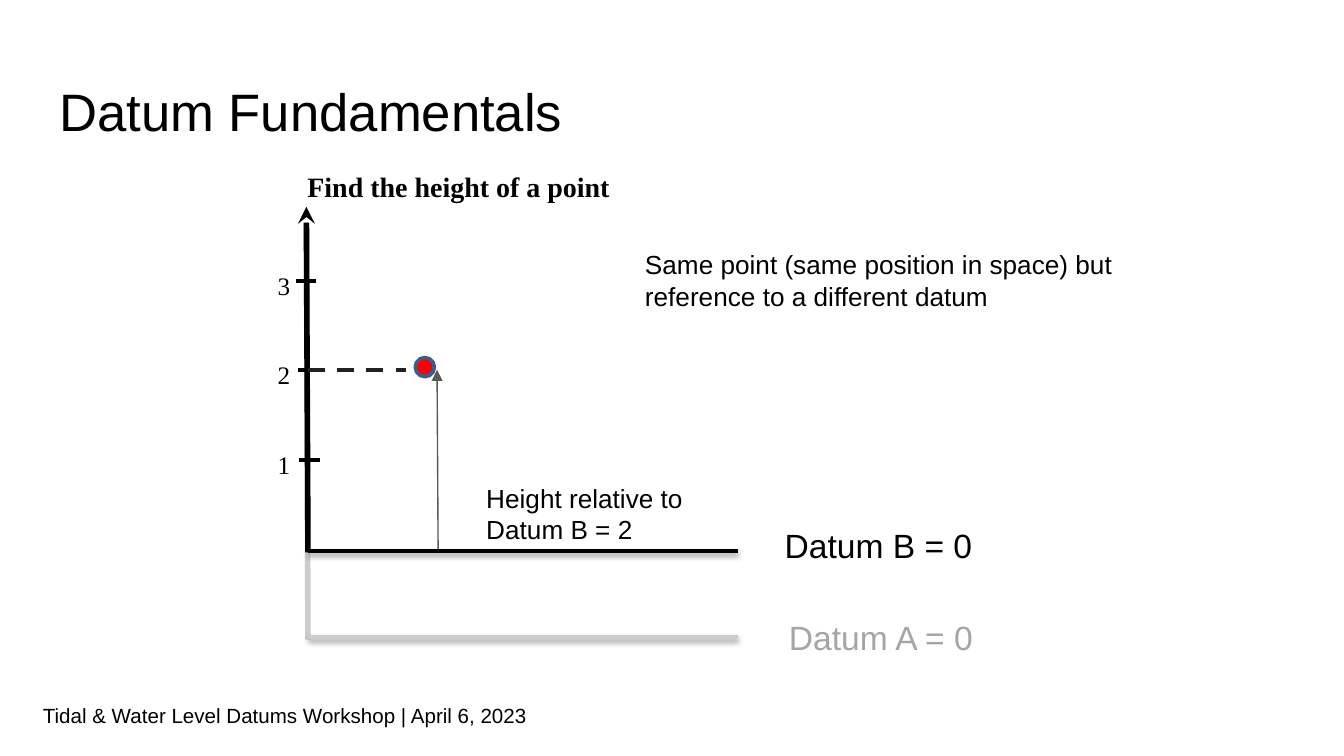
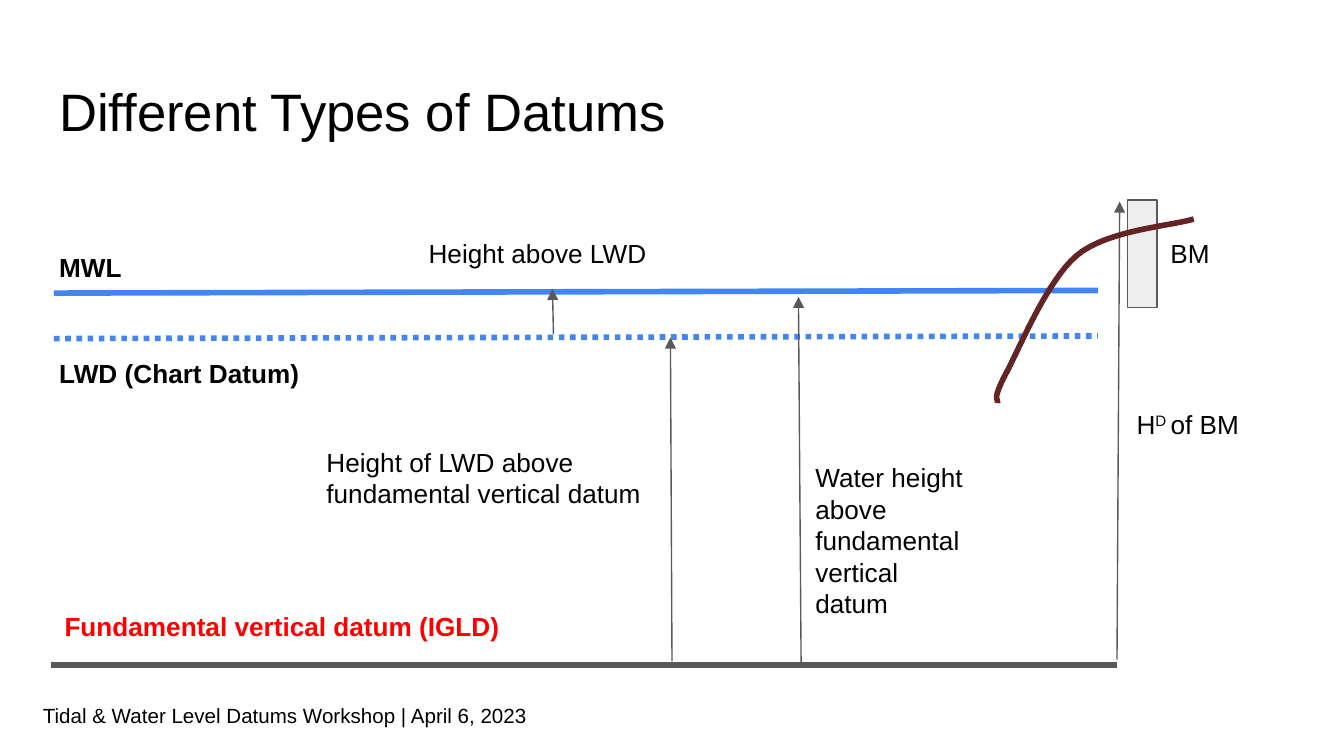
from dataclasses import dataclass

from lxml.etree import SubElement
from pptx import Presentation
from pptx.dml.color import RGBColor
from pptx.enum.dml import MSO_LINE
from pptx.enum.shapes import MSO_CONNECTOR, MSO_SHAPE
from pptx.oxml.ns import qn
from pptx.util import Cm, Pt


@dataclass(frozen=True)
class Theme:
    sans: str = "Arial"
    serif: str = "Times New Roman"
    black: str = "000000"
    dash: str = "212121"
    gray: str = "595959"
    pale: str = "CCCCCC"
    muted: str = "A5A5A5"
    red: str = "FF0000"
    dot_edge: str = "395E89"
    water: str = "4285F4"
    mark: str = "EEEEEE"
    shore: str = "632423"
    title: float = 28.2
    datum: float = 18
    heading: float = 15
    body: float = 14
    tick: float = 13.5
    footer: float = 11
    thin: float = 0.75
    medium: float = 2
    thick: float = 3


def cubic(start, first, second, end, steps=16):
    for step in range(1, steps + 1):
        t = step / steps
        u = 1 - t
        weights = (u ** 3, 3 * u * u * t, 3 * u * t * t, t ** 3)
        yield tuple(
            sum(w * p[axis] for w, p in zip(weights, (start, first, second, end)))
            for axis in (0, 1)
        )


class Deck:
    def __init__(self, theme):
        self.theme = theme
        self.presentation = Presentation()
        self.presentation.slide_width = Cm(25.4)
        self.presentation.slide_height = Cm(14.29)
        self.slide = None

    def new_slide(self, title):
        blank = self.presentation.slide_layouts[6]
        self.slide = self.presentation.slides.add_slide(blank)
        self.text("Tidal & Water Level Datums Workshop | April 6, 2023",
                  0.56, 13.06, 13.74, 0.99, size=self.theme.footer)
        self.text(title, 0.87, 1.24, 23.67, 1.6, size=self.theme.title)

    def text(self, content, left, top, width, height, size=None, color=None,
             font=None, bold=False, pad=0.25):
        box = self.slide.shapes.add_textbox(Cm(left), Cm(top), Cm(width), Cm(height))
        frame = box.text_frame
        frame.word_wrap = True
        frame.margin_left = frame.margin_right = Cm(0.25)
        frame.margin_top = frame.margin_bottom = Cm(pad)
        paragraph = frame.paragraphs[0]
        paragraph.font.name = font or self.theme.sans
        paragraph.font.size = Pt(size or self.theme.body)
        paragraph.font.bold = bold
        paragraph.font.color.rgb = RGBColor.from_string(color or self.theme.black)
        parts = [(content, 0)] if isinstance(content, str) else content
        for words, baseline in parts:
            run = paragraph.add_run()
            run.text = words
            if baseline:
                run._r.get_or_add_rPr().set("baseline", str(baseline * 1000))

    def stroke(self, line, color, width):
        line.color.rgb = RGBColor.from_string(color)
        line.width = Pt(width)

    def line(self, start, end, color, width, dash=None, arrow=None, shadow=False):
        connector = self.slide.shapes.add_connector(
            MSO_CONNECTOR.STRAIGHT, *(Cm(value) for value in (*start, *end)))
        self.stroke(connector.line, color, width)
        if dash:
            connector.line.dash_style = dash
        properties = connector._element.spPr
        if arrow:
            SubElement(properties.find(qn("a:ln")), qn("a:tailEnd"), type=arrow)
        effects = SubElement(properties, qn("a:effectLst"))
        if shadow:
            outer = SubElement(effects, qn("a:outerShdw"), blurRad=str(Pt(3.1)),
                               dist=str(Pt(1.6)), dir="5400000", rotWithShape="0")
            tint = SubElement(outer, qn("a:srgbClr"), val=self.theme.black)
            SubElement(tint, qn("a:alpha"), val="38000")

    def arrow(self, start, end):
        self.line(start, end, self.theme.gray, self.theme.thin, arrow="triangle")

    def shape(self, kind, left, top, width, height, fill, edge, edge_width):
        shape = self.slide.shapes.add_shape(
            kind, Cm(left), Cm(top), Cm(width), Cm(height))
        shape.shadow.inherit = False
        shape.fill.solid()
        shape.fill.fore_color.rgb = RGBColor.from_string(fill)
        self.stroke(shape.line, edge, edge_width)

    def curve(self, start, segments, color, width):
        points = [start]
        for segment in segments:
            points.extend(cubic(points[-1], *segment))
        vertices = [(Cm(x), Cm(y)) for x, y in points]
        builder = self.slide.shapes.build_freeform(*vertices[0], scale=1.0)
        builder.add_line_segments(vertices[1:], close=False)
        outline = builder.convert_to_shape()
        outline.shadow.inherit = False
        outline.fill.background()
        self.stroke(outline.line, color, width)


def datum_fundamentals(deck):
    theme = deck.theme
    axis_top, axis_x, datum_end = (5.79, 3.91), 5.82, 13.94
    datum_b, datum_a = 10.41, 12.04

    deck.new_slide("Datum Fundamentals")
    deck.line((axis_x, 12.09), axis_top, theme.pale, theme.thick, arrow="stealth")
    deck.shape(MSO_SHAPE.OVAL, 7.85, 6.76, 0.36, 0.36,
               theme.red, theme.dot_edge, theme.medium)
    deck.text("Find the height of a point", 5.56, 3.07, 7.59, 0.89,
              size=theme.heading, font=theme.serif, bold=True, pad=0.13)
    deck.line((axis_x, 10.44), axis_top, theme.black, theme.thick, arrow="stealth")
    for height in (1, 2, 3):
        tick_x, tick_y = 5.69 - 0.03 * height, 10.38 - 1.69 * height
        deck.text(str(height), 5, tick_y - 0.33, 0.76, 0.84,
                  size=theme.tick, font=theme.serif, pad=0.13)
        deck.line((tick_x, tick_y), (tick_x + 0.38, tick_y),
                  theme.black, theme.medium)

    deck.line((axis_x, datum_a), (datum_end, datum_a),
              theme.pale, theme.medium, shadow=True)
    deck.text("Datum A = 0", 14.66, 11.53, 4.78, 1.02,
              size=theme.datum, color=theme.muted, pad=0.13)
    deck.line((axis_x, 7), (7.67, 7), theme.dash, 2.25, dash=MSO_LINE.DASH)
    deck.arrow((8.28, datum_b), (8.26, 6.99))
    deck.text("Height relative to Datum B = 2", 8.94, 8.86, 5.31, 1.7)
    deck.text("Same point (same position in space) but reference to a different datum",
              11.94, 4.45, 10.59, 1.7)
    deck.line((axis_x, datum_b), (datum_end, datum_b),
              theme.black, theme.medium, shadow=True)
    deck.text("Datum B = 0", 14.58, 9.8, 5, 1.02, size=theme.datum, pad=0.13)


def datum_types(deck):
    theme = deck.theme
    deck.new_slide("Different Types of Datums")
    deck.line((1.02, 5.54), (20.75, 5.49), theme.water, theme.thick)
    deck.line((1.02, 6.4), (20.75, 6.35), theme.water, theme.thick,
              dash=MSO_LINE.ROUND_DOT)
    deck.line((0.97, 12.57), (21.11, 12.57), theme.gray, theme.thick)
    deck.shape(MSO_SHAPE.RECTANGLE, 21.31, 3.78, 0.56, 2.03,
               theme.mark, theme.gray, theme.thin)

    deck.text("MWL", 0.87, 4.5, 2.41, 1.12, bold=True)
    deck.text("LWD (Chart Datum)", 0.87, 6.5, 5.44, 1.12, bold=True)
    deck.text("Fundamental vertical datum (IGLD)", 0.97, 11.28, 9.3, 1.12,
              color=theme.red, bold=True)

    deck.arrow((21.11, 12.47), (21.16, 3.81))
    deck.text([("H", 0), ("D ", 30), ("of BM", 0)], 21.23, 7.47, 2.67, 1.12)
    deck.text("BM", 21.87, 4.24, 1.57, 1.12)
    deck.curve((22.56, 4.14), [
        ((22.18, 4.27), (20.93, 4.34), (20.35, 4.83)),
        ((19.76, 5.33), (19.23, 6.68), (18.97, 7.14)),
        ((18.75, 7.59), (18.87, 7.52), (18.85, 7.62)),
    ], theme.shore, theme.thick)

    deck.arrow((12.7, 12.5), (12.67, 6.38))
    deck.text("Height of LWD above fundamental vertical datum",
              5.92, 8.18, 6.78, 1.7)
    deck.arrow((15.14, 12.52), (15.09, 5.61))
    deck.text("Water height above fundamental vertical datum",
              15.16, 8.48, 3.4, 3.51)
    deck.arrow((10.46, 6.32), (10.44, 5.46))
    deck.text("Height above LWD", 7.85, 4.24, 5.44, 1.12)


def main():
    deck = Deck(Theme())
    datum_fundamentals(deck)
    datum_types(deck)
    deck.presentation.save("out.pptx")


if __name__ == "__main__":
    main()
